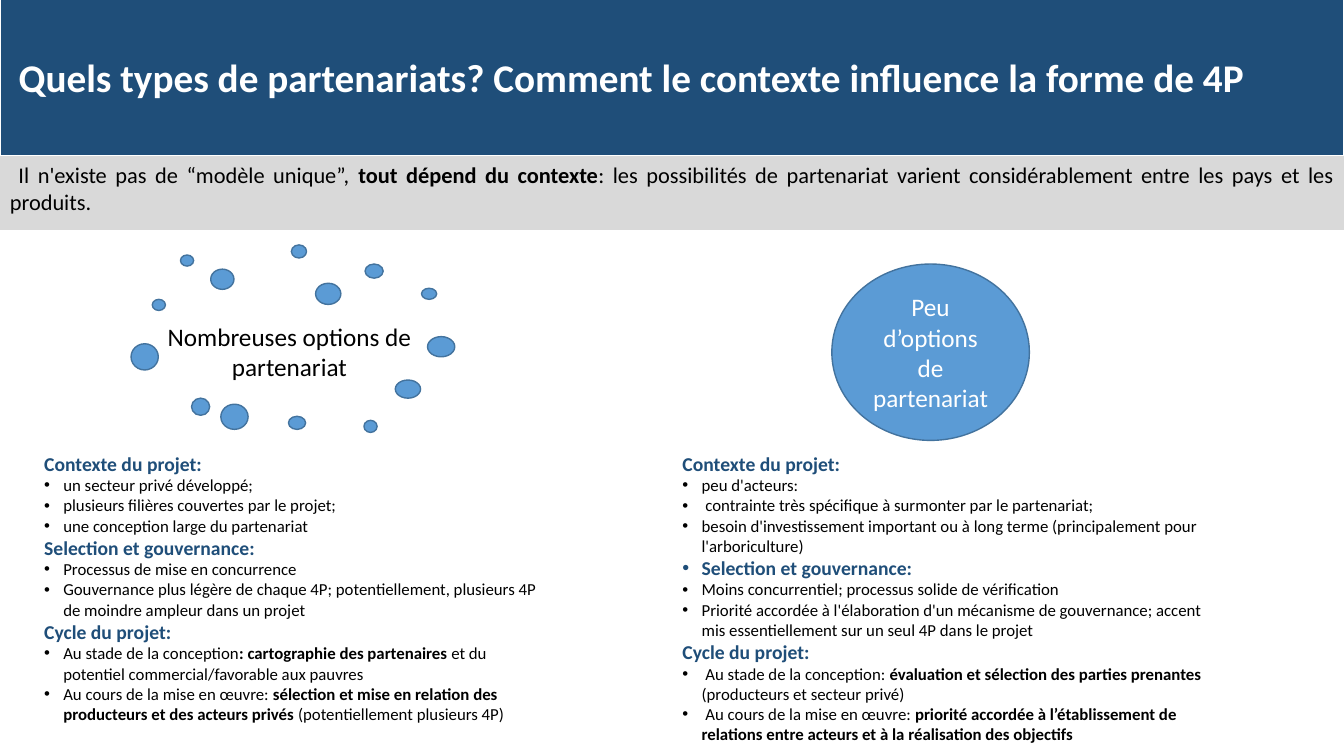
"""Build the slide on partnership types and how context shapes the 4P."""
from pptx import Presentation
from pptx.dml.color import RGBColor
from pptx.enum.shapes import MSO_SHAPE
from pptx.enum.text import MSO_ANCHOR, PP_ALIGN
from pptx.util import Inches, Pt
from lxml import etree

RECT, OVAL = MSO_SHAPE.RECTANGLE, MSO_SHAPE.OVAL
TOP, MIDDLE = MSO_ANCHOR.TOP, MSO_ANCHOR.MIDDLE
LEFT, CENTER, JUSTIFY = PP_ALIGN.LEFT, PP_ALIGN.CENTER, PP_ALIGN.JUSTIFY
WIDTH, HEIGHT = Inches(13.33), Inches(7.5)
INDENT = Inches(0.19)
FONT = "Calibri"
COLORS = {"navy": "1F4E79", "grey": "D9D9D9", "blue": "5B9BD5",
          "edge": "43739E", "white": "FFFFFF", "black": "000000"}

STYLES = {
    "title": {"size": 28, "color": "white", "bold": True, "align": LEFT},
    "message": {"size": 16, "color": "black", "bold": False, "align": JUSTIFY},
    "many": {"size": 18, "color": "black", "bold": False, "align": CENTER},
    "few": {"size": 18, "color": "white", "bold": False, "align": CENTER},
    "heading": {"size": 14, "color": "navy", "bold": True, "align": LEFT},
    "bullet heading": {"size": 14, "color": "navy", "bold": True, "align": LEFT, "bullet": True},
    "item": {"size": 12, "color": "black", "bold": False, "align": LEFT, "bullet": True},
}

TITLE = [("title", " Quels types de partenariats? Comment le contexte influence la forme de 4P")]
MESSAGE = [("message", " Il n'existe pas de “modèle unique”, **tout dépend du contexte**: les possibilités "
            "de partenariat varient considérablement entre les pays et les produits.")]
MANY = [("many", "Nombreuses options de"), ("many", "partenariat")]
FEW = [("few", "Peu d’options de partenariat")]
MANY_DETAILS = [
    ("heading", "Contexte du projet:"),
    ("item", "un secteur privé développé;"),
    ("item", "plusieurs filières couvertes par le projet;"),
    ("item", "une conception large du partenariat"),
    ("heading", "Selection et gouvernance:"),
    ("item", "Processus de mise en concurrence"),
    ("item", "Gouvernance plus légère de chaque 4P; potentiellement, plusieurs 4P "
     "de moindre ampleur dans un projet"),
    ("heading", "Cycle du projet:"),
    ("item", "Au stade de la conception**: cartographie des partenaires **et du "
     "potentiel commercial/favorable aux pauvres"),
    ("item", "Au cours de la mise en œuvre: **sélection et mise en relation des "
     "producteurs et des acteurs privés **(potentiellement plusieurs 4P)"),
]
FEW_DETAILS = [
    ("heading", "Contexte du projet:"),
    ("item", "peu d'acteurs:"),
    ("item", " contrainte très spécifique à surmonter par le partenariat;"),
    ("item", "besoin d'investissement important ou à long terme (principalement pour l'arboriculture)"),
    ("bullet heading", "Selection et gouvernance:"),
    ("item", "Moins concurrentiel; processus solide de vérification"),
    ("item", "Priorité accordée à l'élaboration d'un mécanisme de gouvernance; accent "
     "mis essentiellement sur un seul 4P dans le projet"),
    ("heading", "Cycle du projet:"),
    ("item", " Au stade de la conception: **évaluation et sélection des parties prenantes "
     "**(producteurs et secteur privé)"),
    ("item", " Au cours de la mise en œuvre: **priorité accordée à l’établissement de "
     "relations entre acteurs et à la réalisation des objectifs**"),
]

# Percent of slide width and height: left, top, width, height
DOTS = [
    (15.68, 35.6, 1.73, 2.67), (23.48, 37.47, 1.88, 2.8), (11.33, 39.6, 0.98, 1.47),
    (14.25, 52.67, 1.35, 2.27), (31.36, 38.13, 1.13, 1.47), (29.41, 50.27, 1.88, 2.4),
    (16.43, 53.47, 2.03, 3.33), (31.81, 44.53, 2.03, 2.67), (21.46, 55.07, 1.28, 1.73),
    (27.16, 34.93, 1.35, 1.87), (21.68, 32.4, 1.13, 1.73), (13.43, 33.73, 0.98, 1.47),
    (9.75, 45.47, 2.03, 3.47), (27.08, 55.6, 0.98, 1.6),
]
BARS = [
    ((0, -0.4, 100, 21.07), "navy", ("white", 1.5), TITLE, MIDDLE),
    ((0, 20.67, 100, 9.73), "grey", None, MESSAGE, TOP),
]
FEW_CIRCLE = (61.89, 34.93, 14.7, 23.33)
TEXTS = [
    ((11.03, 41.87, 21.01, 9.47), MANY),
    ((2.55, 59.07, 38.78, 37.73), MANY_DETAILS),
    ((50.04, 59.07, 41.71, 40.4), FEW_DETAILS),
]


def rgb(name):
    return RGBColor.from_string(COLORS[name])


def place(share):
    return [round(part * side / 100) for part, side in zip(share, (WIDTH, HEIGHT) * 2)]


def add_bullet(paragraph):
    properties = paragraph._p.get_or_add_pPr()
    properties.set("marL", str(INDENT))
    properties.set("indent", str(-INDENT))
    namespace = properties.nsmap["a"]
    for tag, key, value in (("buFont", "typeface", "Arial"), ("buChar", "char", "•")):
        etree.SubElement(properties, f"{{{namespace}}}{tag}").set(key, value)


def write(frame, lines, anchor=TOP):
    frame.word_wrap = True
    frame.vertical_anchor = anchor
    for index, (role, text) in enumerate(lines):
        style = STYLES[role]
        paragraph = frame.add_paragraph() if index else frame.paragraphs[0]
        paragraph.alignment = style["align"]
        if style.get("bullet"):
            add_bullet(paragraph)
        for order, piece in enumerate(text.split("**")):
            if piece:
                run = paragraph.add_run()
                run.text = piece
                looks = {"name": FONT, "size": Pt(style["size"]),
                         "bold": style["bold"] or order % 2 == 1}
                for attribute, value in looks.items():
                    setattr(run.font, attribute, value)
                run.font.color.rgb = rgb(style["color"])


def add_figure(slide, preset, share, fill, line, lines=(), anchor=MIDDLE):
    figure = slide.shapes.add_shape(preset, *place(share))
    figure.shadow.inherit = False
    figure.fill.solid()
    figure.fill.fore_color.rgb = rgb(fill)
    if line:
        figure.line.color.rgb = rgb(line[0])
        figure.line.width = Pt(line[1])
    else:
        figure.line.fill.background()
    write(figure.text_frame, lines, anchor)


def main():
    deck = Presentation()
    deck.slide_width, deck.slide_height = WIDTH, HEIGHT
    slide = deck.slides.add_slide(deck.slide_layouts[6])
    for share, fill, line, lines, anchor in BARS:
        add_figure(slide, RECT, share, fill, line, lines, anchor)
    for share in DOTS:
        add_figure(slide, OVAL, share, "blue", ("edge", 1))
    add_figure(slide, OVAL, FEW_CIRCLE, "blue", ("edge", 1), FEW)
    for share, lines in TEXTS:
        write(slide.shapes.add_textbox(*place(share)).text_frame, lines)
    deck.save("out.pptx")


if __name__ == "__main__":
    main()
